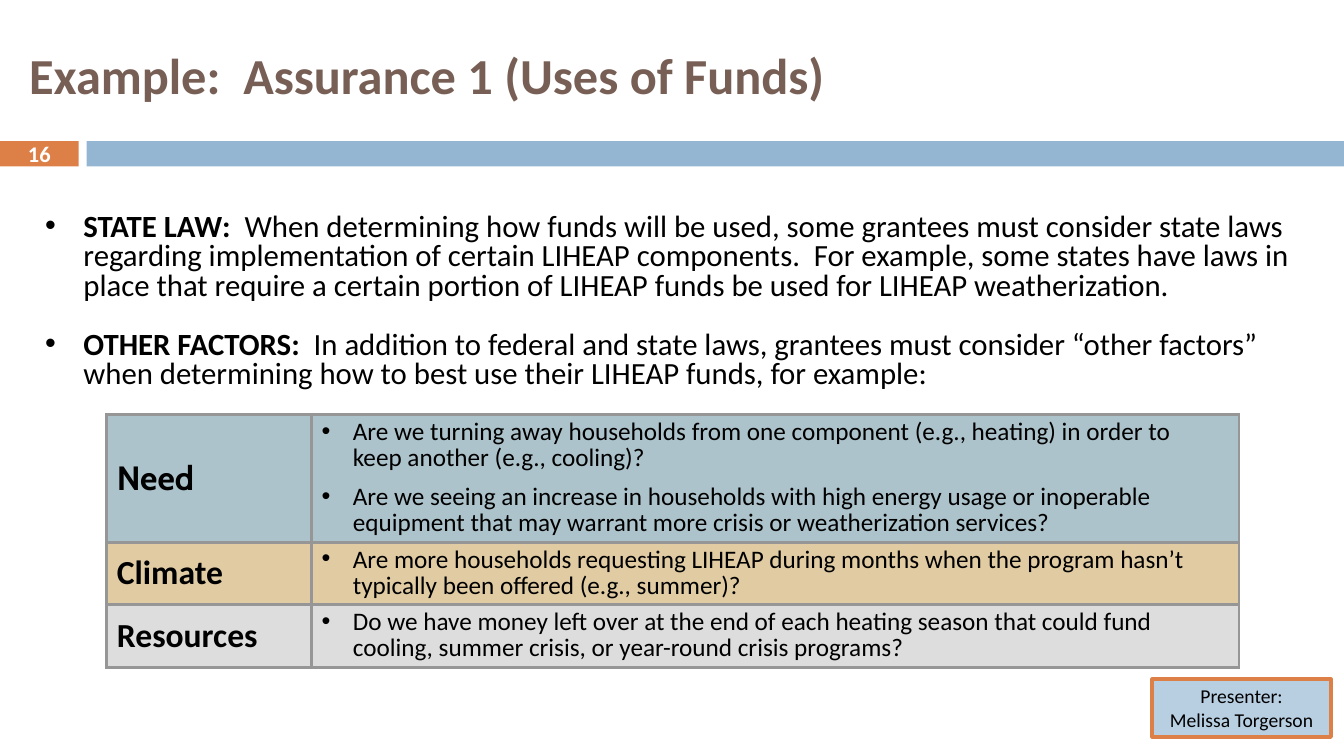
from lxml import etree
from pptx import Presentation
from pptx.dml.color import RGBColor
from pptx.enum.shapes import MSO_SHAPE
from pptx.enum.text import MSO_ANCHOR, PP_ALIGN
from pptx.oxml.ns import qn
from pptx.util import Pt

RECT = MSO_SHAPE.RECTANGLE
MIDDLE, TOP = MSO_ANCHOR.MIDDLE, MSO_ANCHOR.TOP
LEFT, CENTER = PP_ALIGN.LEFT, PP_ALIGN.CENTER
PX = 9144  # EMU per px, 100 px to the inch


class Theme:
    face, label = "Calibri", "Cabin"
    brown, orange, blue = "775F55", "DD8047", "94B6D2"
    black, white, edge = "000000", "FFFFFF", "969696"
    teal, sand, grey = "ADC3CB", "E0CBA3", "DDDDDD"
    title, head, body, cell, page, badge = 36, 24, 22, 18, 16, 14


POINTS = [
    ("STATE LAW:  ", "When determining how funds will be used, some grantees must consider state laws regarding implementation of certain LIHEAP components.  For example, some states have laws in place that require a certain portion of LIHEAP funds be used for LIHEAP weatherization."),
    ("OTHER FACTORS:  ", "In addition to federal and state laws, grantees must consider “other factors” when determining how to best use their LIHEAP funds, for example:"),
]
FACTORS = [
    ("Need", Theme.label, Theme.teal, 127, [
        "Are we turning away households from one component (e.g., heating) in order to keep another (e.g., cooling)?",
        "Are we seeing an increase in households with high energy usage or inoperable equipment that may warrant more crisis or weatherization services?"]),
    ("Climate", Theme.face, Theme.sand, 62, [
        "Are more households requesting LIHEAP during months when the program hasn’t typically been offered (e.g., summer)?"]),
    ("Resources", Theme.face, Theme.grey, 62, [
        "Do we have money left over at the end of each heating season that could fund cooling, summer crisis, or year-round crisis programs?"]),
]


def px(*nums):
    return [n * PX for n in nums]


def put(item, **vals):
    for key, val in vals.items():
        setattr(item, key, val)


def paint(fill, tone):
    fill.solid()
    fill.fore_color.rgb = RGBColor.from_string(tone)


def write(para, text, size, tone=Theme.black, bold=False, face=Theme.face):
    run = para.add_run()
    run.text = text
    put(run.font, size=Pt(size), bold=bold, name=face)
    run.font.color.rgb = RGBColor.from_string(tone)


def bullet(para, indent, lead, gap):
    """Give a paragraph a hanging bullet, line spacing and a gap above in points."""
    put(para, line_spacing=lead, space_before=Pt(gap))
    props = para._p.get_or_add_pPr()
    put_xml = {"marL": indent * PX, "indent": -indent * PX}
    for key, val in put_xml.items():
        props.set(key, str(val))
    etree.SubElement(props, qn("a:buFont"), typeface="Arial")
    etree.SubElement(props, qn("a:buChar"), char="•")


def paras(frame, count):
    """Yield the first paragraph, then new ones, with their index."""
    for i in range(count):
        yield i, frame.add_paragraph() if i else frame.paragraphs[0]


def label(slide, box, anchor=MIDDLE):
    frame = slide.shapes.add_textbox(*px(*box)).text_frame
    put(frame, word_wrap=True, vertical_anchor=anchor)
    return frame


def block(slide, box, tone):
    shape = slide.shapes.add_shape(RECT, *px(*box))
    shape.shadow.inherit = False
    paint(shape.fill, tone)
    shape.line.fill.background()
    return shape


def header(slide, box):
    left, top, width, height = box
    tab, gap, band, bar = 78, 8, 140, 25
    start = left + tab + gap
    number = block(slide, (left, top + band, tab, bar), Theme.orange)
    block(slide, (start, top + band, width - start, bar), Theme.blue)
    title = label(slide, (left + 19, top + 20, 1189, 108))
    write(title.paragraphs[0], "Example:  Assurance 1 (Uses of Funds)",
          Theme.title, Theme.brown, True)
    frame = number.text_frame
    put(frame, vertical_anchor=MIDDLE, margin_top=0, margin_bottom=0)
    frame.paragraphs[0].alignment = CENTER
    write(frame.paragraphs[0], "16", Theme.page, Theme.white, True)


def points(slide, box):
    frame = label(slide, box, TOP)
    for i, para in paras(frame, len(POINTS)):
        bullet(para, 38, 0.8, 21 * i)
        lead, text = POINTS[i]
        write(para, lead, Theme.body, bold=True)
        write(para, text, Theme.body)


def border(cell):
    props = cell._tc.get_or_add_tcPr()
    for side in ("a:lnL", "a:lnR", "a:lnT", "a:lnB"):
        line = etree.SubElement(props, qn(side), w=str(Pt(2.25)))
        fill = etree.SubElement(line, qn("a:solidFill"))
        etree.SubElement(fill, qn("a:srgbClr"), val=Theme.edge)


def factors(slide, box):
    left, top, width, height = box
    name = 203
    grid = slide.shapes.add_table(len(FACTORS), 2, *px(*box)).table
    put(grid, first_row=False, horz_banding=False)
    for col, size in zip(grid.columns, px(name, width - name)):
        col.width = size
    for row, (head, face, tone, tall, asks) in zip(grid.rows, FACTORS):
        row.height = tall * PX
        for cell in row.cells:
            border(cell)
            paint(cell.fill, tone)
            cell.vertical_anchor = MIDDLE
        first, last = row.cells
        write(first.text_frame.paragraphs[0], head, Theme.head, bold=True, face=face)
        last.margin_right = 20 * PX
        for i, para in paras(last.text_frame, len(asks)):
            bullet(para, 31, 0.85, 9 * i)
            write(para, asks[i], Theme.cell)


def badge(slide, box):
    shape = block(slide, box, Theme.blue)
    tone = shape.fill._xPr.find(qn("a:solidFill"))[0]
    etree.SubElement(tone, qn("a:alpha"), val="66000")
    paint(shape.line.fill, Theme.orange)
    shape.line.width = Pt(3)
    frame = shape.text_frame
    put(frame, word_wrap=True, vertical_anchor=TOP)
    lines = ["Presenter:", "Melissa Torgerson"]
    for i, para in paras(frame, len(lines)):
        para.alignment = CENTER
        write(para, lines[i], Theme.badge)


def main():
    deck = Presentation()
    put(deck, slide_width=1333 * PX, slide_height=750 * PX)
    slide = deck.slides.add_slide(deck.slide_layouts[6])
    header(slide, (0, 0, 1333, 165))
    points(slide, (35, 207, 1277, 321))
    factors(slide, (106, 411, 1123, 251))
    badge(slide, (1143, 674, 177, 57))
    deck.save("out.pptx")


if __name__ == "__main__":
    main()
